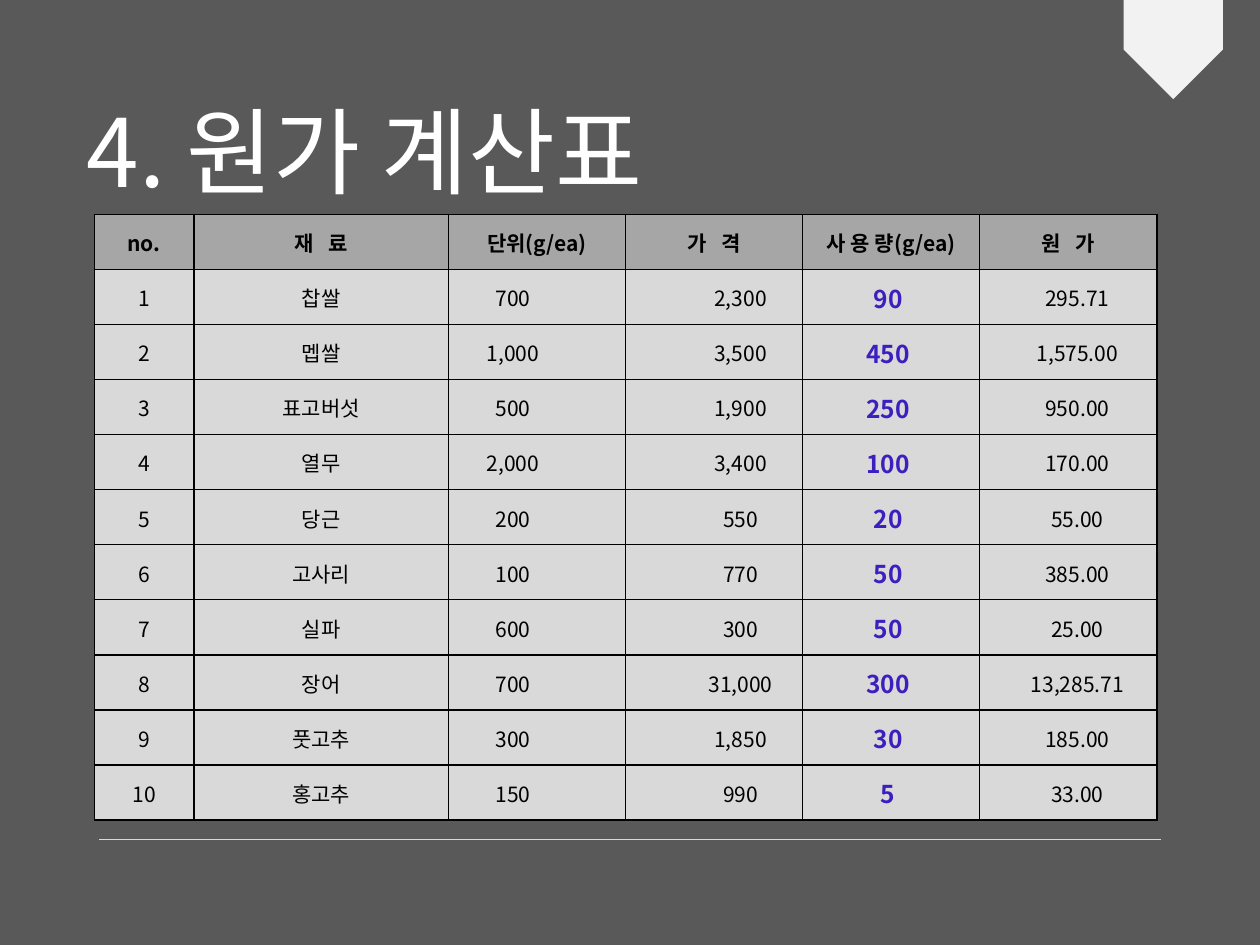
import pptx
import pptx.dml.color
import pptx.enum.shapes
import pptx.enum.text
import pptx.oxml
import pptx.oxml.ns
import pptx.util

Cm = pptx.util.Cm
Pt = pptx.util.Pt
Align = pptx.enum.text.PP_ALIGN
Anchor = pptx.enum.text.MSO_ANCHOR

FONT = "Noto Sans CJK KR"
COLORS = {
    "background": "595959",
    "rule": "D9D9D9",
    "ribbon": "F2F2F2",
    "title": "FFFFFF",
    "header": "A6A6A6",
    "body": "D9D9D9",
    "text": "000000",
    "usage": "3D1FBF",
}

COLUMN_WIDTHS = [2.01, 5.13, 3.57, 3.57, 3.57, 3.57]
ROW_HEIGHT = 1.11
INSET = 0.03
BODY_INSETS = {2: (INSET, 1.0), 3: (1.1, INSET), 4: (INSET, 0.15), 5: (0.4, INSET)}
USAGE_COLUMN = 4

HEADERS = ["no.", "재 료", "단위(g/ea)", "가 격", "사 용 량(g/ea)", "원 가"]
SPREAD_HEADERS = {"재 료", "가 격", "원 가"}
INGREDIENTS = [
    ("찹쌀", "700", "2,300", "90", "295.71"),
    ("멥쌀", "1,000", "3,500", "450", "1,575.00"),
    ("표고버섯", "500", "1,900", "250", "950.00"),
    ("열무", "2,000", "3,400", "100", "170.00"),
    ("당근", "200", "550", "20", "55.00"),
    ("고사리", "100", "770", "50", "385.00"),
    ("실파", "600", "300", "50", "25.00"),
    ("장어", "700", "31,000", "300", "13,285.71"),
    ("풋고추", "300", "1,850", "30", "185.00"),
    ("홍고추", "150", "990", "5", "33.00"),
]


def color(name):
    return pptx.dml.color.RGBColor.from_string(COLORS[name])


def paint(fill, name):
    fill.solid()
    fill.fore_color.rgb = color(name)


def write_text(frame, text, size=12, shade="text", bold=False, align=Align.LEFT, spacing=0):
    para = frame.paragraphs[0]
    para.alignment = align
    span = para.add_run()
    span.text = text
    span.font.size = Pt(size)
    span.font.bold = bold
    span.font.name = FONT
    span.font.color.rgb = color(shade)
    properties = span.font._element
    east_asian = pptx.oxml.parse_xml(
        f'<a:ea {pptx.oxml.ns.nsdecls("a")} typeface="{FONT}"/>')
    properties.find(pptx.oxml.ns.qn("a:latin")).addnext(east_asian)
    if spacing:
        properties.set("spc", str(round(spacing * 100)))


def add_rule(page):
    rule = page.shapes.add_connector(
        pptx.enum.shapes.MSO_CONNECTOR.STRAIGHT, Cm(2), Cm(16.92), Cm(23.4), Cm(16.92))
    rule.line.color.rgb = color("rule")
    rule.line.width = Pt(0.75)
    rule._element.spPr.append(
        pptx.oxml.parse_xml(f'<a:effectLst {pptx.oxml.ns.nsdecls("a")}/>'))


def add_ribbon(page):
    ribbon = page.shapes.add_shape(
        pptx.enum.shapes.MSO_SHAPE.PENTAGON, Cm(22.65), Cm(0), Cm(2), Cm(2))
    ribbon.rotation = 90
    ribbon.shadow.inherit = False
    paint(ribbon.fill, "ribbon")
    ribbon.line.fill.background()


def add_title(page, text):
    box = page.shapes.add_textbox(Cm(1.5), Cm(1.73), Cm(21.8), Cm(2.56))
    frame = box.text_frame
    frame.word_wrap = True
    frame.auto_size = pptx.enum.text.MSO_AUTO_SIZE.SHAPE_TO_FIT_TEXT
    frame.vertical_anchor = Anchor.MIDDLE
    write_text(frame, text, size=54, shade="title")


def add_borders(cell):
    properties = cell._tc.get_or_add_tcPr()
    for side in ("lnL", "lnR", "lnT", "lnB"):
        properties.append(pptx.oxml.parse_xml(
            f'<a:{side} {pptx.oxml.ns.nsdecls("a")} w="{Pt(1)}"><a:solidFill>'
            f'<a:srgbClr val="{COLORS["text"]}"/></a:solidFill></a:{side}>'))


def fill_cell(cell, text, fill, insets=(INSET, INSET), **text_format):
    add_borders(cell)
    paint(cell.fill, fill)
    cell.vertical_anchor = Anchor.MIDDLE
    cell.margin_left, cell.margin_right = (Cm(inset) for inset in insets)
    cell.margin_top, cell.margin_bottom = Cm(INSET), Cm(0)
    write_text(cell.text_frame, text, align=Align.CENTER, **text_format)


def add_cost_table(page):
    row_count = len(INGREDIENTS) + 1
    table = page.shapes.add_table(
        row_count, len(HEADERS), Cm(1.9), Cm(4.32),
        Cm(sum(COLUMN_WIDTHS)), Cm(ROW_HEIGHT * row_count)).table
    table.horz_banding = False
    for column, width in zip(table.columns, COLUMN_WIDTHS):
        column.width = Cm(width)
    for row in table.rows:
        row.height = Cm(ROW_HEIGHT)
    for index, text in enumerate(HEADERS):
        spacing = 2.7 if text in SPREAD_HEADERS else 0
        fill_cell(table.cell(0, index), text, "header", bold=True, spacing=spacing)
    for number, ingredient in enumerate(INGREDIENTS, start=1):
        for index, text in enumerate((str(number), *ingredient)):
            emphasis = {}
            if index == USAGE_COLUMN:
                emphasis = {"size": 14, "shade": "usage", "bold": True}
            insets = BODY_INSETS.get(index, (INSET, INSET))
            fill_cell(table.cell(number, index), text, "body", insets, **emphasis)


def main():
    deck = pptx.Presentation()
    deck.slide_width, deck.slide_height = Cm(25.4), Cm(19.05)
    page = deck.slides.add_slide(deck.slide_layouts[6])
    paint(page.background.fill, "background")
    add_rule(page)
    add_ribbon(page)
    add_title(page, "4. 원가 계산표")
    add_cost_table(page)
    deck.save("out.pptx")


if __name__ == "__main__":
    main()
